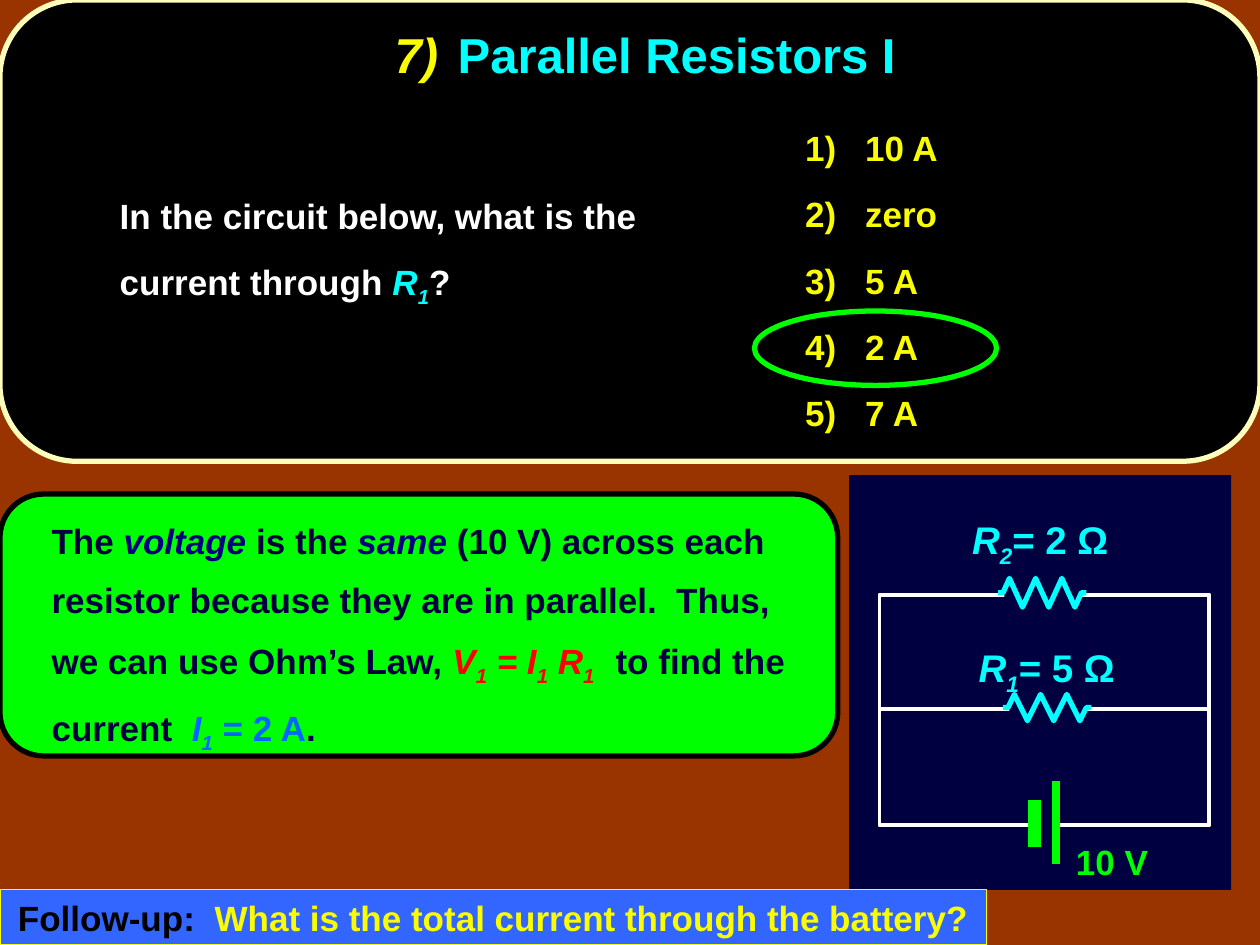
import dataclasses

import pptx
import pptx.dml.color
import pptx.enum.shapes
import pptx.enum.text
import pptx.oxml
import pptx.oxml.ns
import pptx.util

Cm = pptx.util.Cm
Pt = pptx.util.Pt
SHAPES = pptx.enum.shapes.MSO_SHAPE
ALIGN = pptx.enum.text.PP_ALIGN
ANCHOR = pptx.enum.text.MSO_ANCHOR


@dataclasses.dataclass(frozen=True)
class Theme:
    font: str = "Arial"
    title_size: int = 28
    label_size: int = 22
    text_size: int = 20
    background: str = "993300"
    black: str = "000000"
    white: str = "FFFFFF"
    cream: str = "FCFEB9"
    yellow: str = "FAFD00"
    cyan: str = "00FFFF"
    green: str = "00FF00"
    navy: str = "000040"
    emphasis: str = "000080"
    red: str = "FF0000"
    blue: str = "0066FF"
    banner: str = "3366FF"


THEME = Theme()

# Runs are (text, colour, marks); marks: i = italic, s = subscript
TITLE = [("7)\t", THEME.yellow, "i"), ("Parallel Resistors I", THEME.cyan, "")]
QUESTION = [
    ("In the circuit below, what is the current through ", THEME.white, ""),
    ("R", THEME.cyan, "i"), ("1", THEME.cyan, "is"), ("?", THEME.white, ""),
]
ANSWERS = ["10 A", "zero", "5 A", "2 A", "7 A"]
EXPLANATION = [
    ("The ", THEME.navy, ""), ("voltage", THEME.emphasis, "i"),
    (" is the ", THEME.navy, ""), ("same", THEME.emphasis, "i"),
    (" (10 V) across each resistor because they are in parallel.  Thus, "
     "we can use Ohm’s Law, ", THEME.navy, ""),
    ("V", THEME.red, "i"), ("1", THEME.red, "is"),
    (" = I", THEME.red, "i"), ("1", THEME.red, "is"),
    (" R", THEME.red, "i"), ("1  ", THEME.red, "is"),
    (" to find the current  ", THEME.navy, ""),
    ("I", THEME.blue, "i"), ("1", THEME.blue, "is"),
    (" = 2 A", THEME.blue, ""), (".", THEME.navy, ""),
]
FOLLOW_UP = [
    ("Follow-up:", THEME.black, ""),
    ("  What is the total current through the battery?", THEME.yellow, ""),
]
# Subscript, value, label position, zigzag position and height (cm)
RESISTORS = [
    ("2", "= 2 Ω", (19.35, 10.29), (20.12, 11.66), 0.58),
    ("1", "= 5 Ω", (19.48, 12.88), (20.22, 14.0), 0.53),
]
BATTERY_PLATES = [(20.85, 16.13, 17.07, 7.5), (21.29, 15.75, 17.42, 4.5)]


def rgb(value):
    return pptx.dml.color.RGBColor.from_string(value)


def paint(shape, fill=None, line=None, width=0):
    shape.shadow.inherit = False
    if fill:
        shape.fill.solid()
        shape.fill.fore_color.rgb = rgb(fill)
    else:
        shape.fill.background()
    if line:
        shape.line.color.rgb = rgb(line)
        shape.line.width = Pt(width)
    else:
        shape.line.fill.background()


def add_shape(slide, kind, box, fill=None, line=None, width=0):
    shape = slide.shapes.add_shape(kind, *map(Cm, box))
    paint(shape, fill, line, width)
    return shape


def add_line(slide, start, end, colour, width):
    line = slide.shapes.add_connector(
        pptx.enum.shapes.MSO_CONNECTOR.STRAIGHT, *map(Cm, start + end))
    line.line.color.rgb = rgb(colour)
    line.line.width = Pt(width)
    properties = line._element.spPr
    properties.append(pptx.oxml.parse_xml(
        "<a:effectLst %s/>" % pptx.oxml.ns.nsdecls("a")))


def place(shape, box):
    shape.left, shape.top, shape.width, shape.height = map(Cm, box)
    shape.text_frame.auto_size = pptx.enum.text.MSO_AUTO_SIZE.NONE
    return shape


def write(paragraph, runs, size=THEME.text_size, align=ALIGN.LEFT,
          spacing=1.0, before=0, margin=0, indent=0):
    paragraph.alignment = align
    paragraph.line_spacing = spacing
    paragraph.space_before = Pt(before)
    properties = paragraph._p.get_or_add_pPr()
    properties.set("marL", str(Cm(margin)))
    properties.set("indent", str(Cm(indent)))
    properties.append(pptx.oxml.parse_xml(
        "<a:buNone %s/>" % pptx.oxml.ns.nsdecls("a")))
    for text, colour, marks in runs:
        run = paragraph.add_run()
        run.text = text
        font = run.font
        font.name, font.size, font.bold = THEME.font, Pt(size), True
        font.italic = "i" in marks
        font.color.rgb = rgb(colour)
        if "s" in marks:
            font._element.set("baseline", "-25000")


def add_label(slide, box, runs, size):
    label = add_shape(slide, SHAPES.RECTANGLE, box, THEME.navy)
    label.text_frame.word_wrap = False
    label.text_frame.vertical_anchor = ANCHOR.TOP
    write(label.text_frame.paragraphs[0], runs, size, spacing=0.9)


def add_text_box(slide, box):
    text_box = slide.shapes.add_textbox(*map(Cm, box))
    text_box.text_frame.word_wrap = True
    return text_box.text_frame


def add_resistor(slide, left, top, height):
    """Hide the wire behind the resistor, then draw three zigzag periods."""
    add_shape(slide, SHAPES.RECTANGLE,
              (left + 0.13, top + 0.07, 1.54, height - 0.16), THEME.navy)
    middle = top + height / 2
    peaks = [(left + 0.23 + 0.264 * i, top + height * (i % 2)) for i in range(6)]
    points = ([(left, middle), (left + 0.1, middle)] + peaks
              + [(left + 1.68, middle), (left + 1.78, middle)])
    points = [(Cm(x), Cm(y)) for x, y in points]
    builder = slide.shapes.build_freeform(*points[0])
    builder.add_line_segments(points[1:], close=False)
    paint(builder.convert_to_shape(), THEME.navy, THEME.cyan, 3)


def add_circuit(slide):
    add_shape(slide, SHAPES.RECTANGLE, (17.12, 9.58, 7.7, 8.36), THEME.navy)
    add_shape(slide, SHAPES.RECTANGLE, (17.73, 11.99, 6.65, 4.65),
              THEME.navy, THEME.white, 2.25)
    add_shape(slide, SHAPES.RECTANGLE, (20.93, 16.13, 0.3, 0.97),
              THEME.navy, THEME.navy, 1.5)
    for x, top, bottom, width in BATTERY_PLATES:
        add_line(slide, (x, top), (x, bottom), THEME.green, width)
    add_label(slide, (21.44, 16.92, 1.96, 1.02),
              [("10 V", THEME.green, "")], THEME.text_size)
    add_line(slide, (17.75, 14.3), (24.38, 14.3), THEME.white, 2.25)
    for number, value, label_at, zigzag_at, height in RESISTORS:
        runs = [("R", THEME.cyan, "i"), (number, THEME.cyan, "is"),
                (value, THEME.cyan, "")]
        add_label(slide, label_at + (3.28, 1.09), runs, THEME.label_size)
        add_resistor(slide, *zigzag_at, height)


def main():
    presentation = pptx.Presentation()
    presentation.slide_width, presentation.slide_height = Cm(25.4), Cm(19.05)
    slide = presentation.slides.add_slide(presentation.slide_layouts[1])
    slide.background.fill.solid()
    slide.background.fill.fore_color.rgb = rgb(THEME.background)

    title = place(slide.shapes.title, (1.83, 0, 22.35, 2.34))
    title.text_frame.vertical_anchor = ANCHOR.MIDDLE
    write(title.text_frame.paragraphs[0], TITLE, THEME.title_size,
          ALIGN.CENTER, 0.9)
    question = place(slide.placeholders[1], (1.04, 3.38, 12.09, 2.97))
    write(question.text_frame.paragraphs[0], QUESTION, spacing=1.5, margin=1.12)

    panel = add_shape(slide, SHAPES.ROUNDED_RECTANGLE, (0, 0, 25.4, 9.3),
                      THEME.black, THEME.cream, 3)
    title._element.addprevious(panel._element)

    add_shape(slide, SHAPES.ROUNDED_RECTANGLE, (0, 9.96, 16.89, 5.28),
              THEME.green, THEME.black, 3)
    explanation = add_text_box(slide, (0, 10.01, 16.76, 5))
    write(explanation.paragraphs[0], EXPLANATION, spacing=1.4, margin=0.79)

    add_shape(slide, SHAPES.OVAL, (15.21, 6.27, 4.88, 1.5),
              line=THEME.green, width=3)
    add_circuit(slide)

    answers = add_text_box(slide, (15.98, 2.34, 6.88, 6.6))
    for number, answer in enumerate(ANSWERS, 1):
        paragraph = answers.paragraphs[0] if number == 1 else answers.add_paragraph()
        write(paragraph, [(f"{number})\t{answer}", THEME.yellow, "")],
              spacing=1.1, before=11.5, margin=1.21, indent=-1.21)

    banner = add_shape(slide, SHAPES.RECTANGLE, (0, 17.93, 19.89, 1.12),
                       THEME.banner, THEME.yellow, 0.75)
    write(banner.text_frame.paragraphs[0], FOLLOW_UP, align=ALIGN.CENTER)
    presentation.save("out.pptx")


if __name__ == "__main__":
    main()
